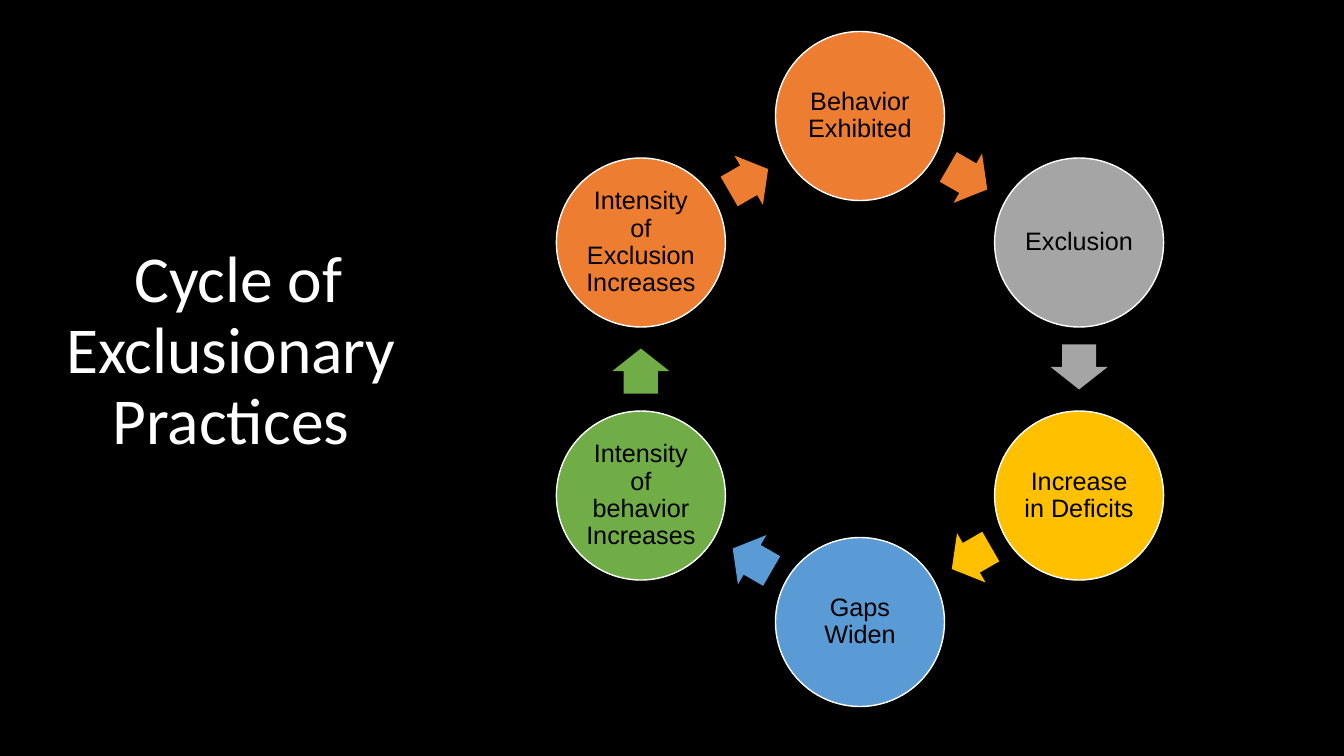
import dataclasses
import math

import pptx
import pptx.dml.color
import pptx.enum.shapes
import pptx.enum.text
import pptx.util

RGBColor = pptx.dml.color.RGBColor
BLACK = RGBColor(0x00, 0x00, 0x00)
WHITE = RGBColor(0xFF, 0xFF, 0xFF)
ORANGE = RGBColor(0xED, 0x7D, 0x31)
GRAY = RGBColor(0xA5, 0xA5, 0xA5)
GOLD = RGBColor(0xFF, 0xC0, 0x00)
BLUE = RGBColor(0x5B, 0x9B, 0xD5)
GREEN = RGBColor(0x70, 0xAD, 0x47)

SLIDE_W, SLIDE_H = 1344, 756
EMU_PER_PX = 12192000 / SLIDE_W

CENTER_X, CENTER_Y = 860, 369
RING_RADIUS = 253
CIRCLE_SIZE = 169
ARROW_LENGTH, ARROW_WIDTH = 45, 57
ARROW_SETBACK = 2


@dataclasses.dataclass(frozen=True)
class Stage:
    label: str
    color: RGBColor


STAGES = [
    Stage("Behavior Exhibited", ORANGE),
    Stage("Exclusion", GRAY),
    Stage("Increase in Deficits", GOLD),
    Stage("Gaps Widen", BLUE),
    Stage("Intensity of behavior Increases", GREEN),
    Stage("Intensity of Exclusion Increases", ORANGE),
]
STEP = 360 / len(STAGES)

LABEL_FONT = {"name": "Arial", "size": pptx.util.Pt(18)}
TITLE_FONT = {"name": "Calibri", "size": pptx.util.Pt(46.8)}


def px(value: float) -> pptx.util.Emu:
    return pptx.util.Emu(round(value * EMU_PER_PX))


def ring_point(angle: float, radius: float) -> tuple[float, float]:
    """Return the point at an angle in degrees, clockwise from the top."""
    a = math.radians(angle)
    return CENTER_X + radius * math.sin(a), CENTER_Y - radius * math.cos(a)


def write_text(sp, text: str, font: dict, color: RGBColor) -> None:
    tf = sp.text_frame
    tf.word_wrap = True
    tf.vertical_anchor = pptx.enum.text.MSO_ANCHOR.MIDDLE
    p = tf.paragraphs[0]
    p.alignment = pptx.enum.text.PP_ALIGN.CENTER
    p.line_spacing = 0.9
    r = p.add_run()
    r.text = text
    for name, value in font.items():
        setattr(r.font, name, value)
    r.font.color.rgb = color


def add_centered(s, kind, x: float, y: float, w: int, h: int, color: RGBColor):
    """Add a filled preset shape centred on (x, y)."""
    sp = s.shapes.add_shape(kind, px(x - w / 2), px(y - h / 2), px(w), px(h))
    sp.shadow.inherit = False
    sp.fill.solid()
    sp.fill.fore_color.rgb = color
    return sp


def add_circle(s, stage: Stage, angle: float) -> None:
    x, y = ring_point(angle, RING_RADIUS)
    sp = add_centered(s, pptx.enum.shapes.MSO_SHAPE.OVAL, x, y,
                      CIRCLE_SIZE, CIRCLE_SIZE, stage.color)
    sp.line.color.rgb = WHITE
    sp.line.width = pptx.util.Pt(1)
    for side in ("left", "top", "right", "bottom"):
        setattr(sp.text_frame, f"margin_{side}", px(3))
    write_text(sp, stage.label, LABEL_FONT, BLACK)


def add_arrow(s, stage: Stage, angle: float) -> None:
    """Add the arrow halfway to the next circle, set back along its direction."""
    half = STEP / 2
    x, y = ring_point(angle + half, RING_RADIUS * math.cos(math.radians(half)))
    rotation = angle + half
    x -= ARROW_SETBACK * math.cos(math.radians(rotation))
    y -= ARROW_SETBACK * math.sin(math.radians(rotation))
    sp = add_centered(s, pptx.enum.shapes.MSO_SHAPE.RIGHT_ARROW, x, y,
                      ARROW_LENGTH, ARROW_WIDTH, stage.color)
    sp.rotation = rotation
    sp.adjustments[0] = 0.6
    sp.adjustments[1] = 0.5
    sp.line.fill.background()


def main() -> None:
    prs = pptx.Presentation()
    prs.slide_width, prs.slide_height = px(SLIDE_W), px(SLIDE_H)
    s = prs.slides.add_slide(prs.slide_layouts[6])
    s.background.fill.solid()
    s.background.fill.fore_color.rgb = BLACK

    title = s.shapes.add_textbox(px(17), px(290), px(428), px(125))
    write_text(title, " Cycle of Exclusionary Practices", TITLE_FONT, WHITE)

    for i, stage in enumerate(STAGES):
        add_circle(s, stage, i * STEP)
        add_arrow(s, stage, i * STEP)

    prs.save("out.pptx")


if __name__ == "__main__":
    main()
